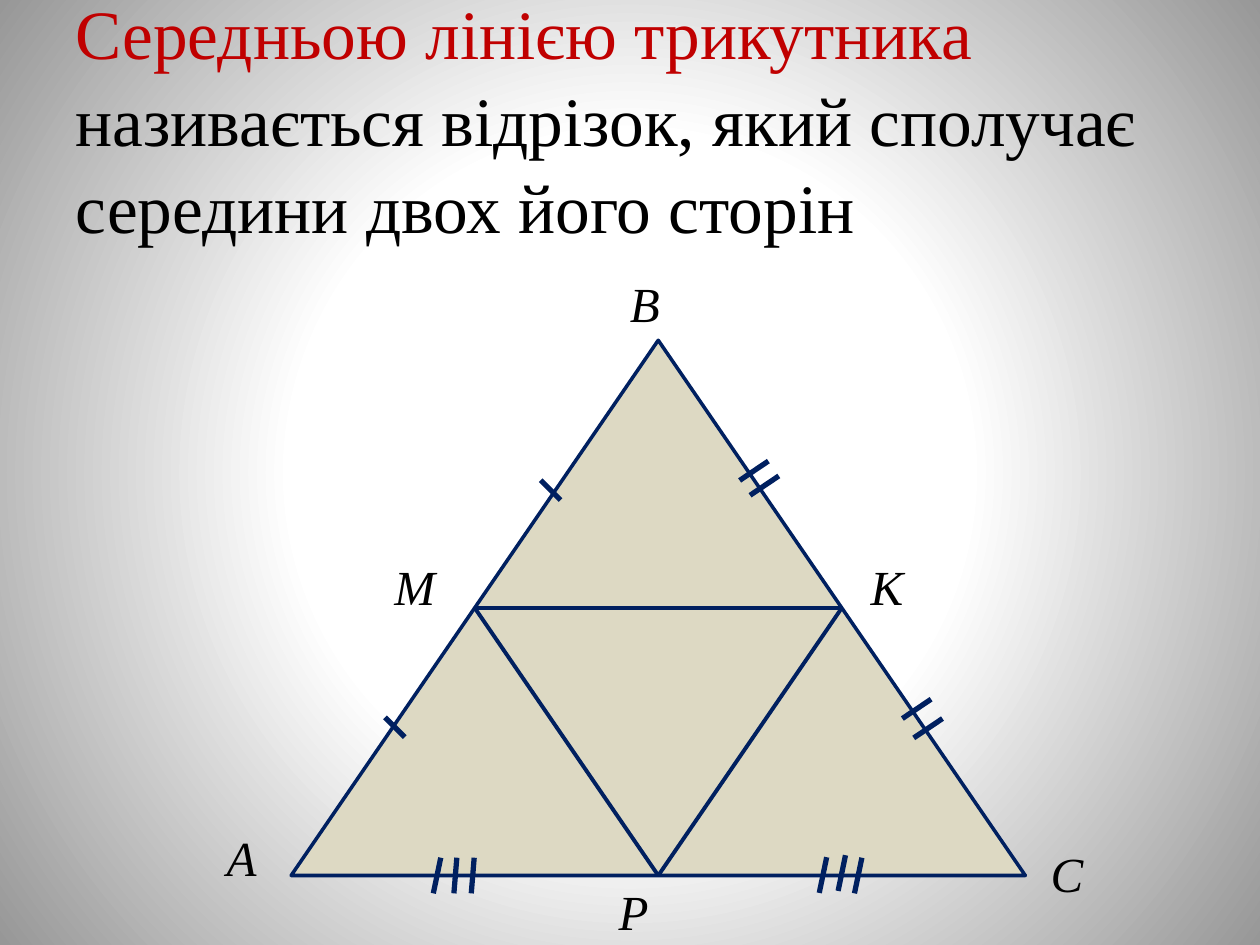
import dataclasses
import lxml.etree
import pptx
import pptx.dml.color
import pptx.enum.shapes
import pptx.enum.text
import pptx.oxml.ns
import pptx.util

Cm = pptx.util.Cm
Pt = pptx.util.Pt
RGBColor = pptx.dml.color.RGBColor
qn = pptx.oxml.ns.qn

NAVY = RGBColor(0x00, 0x20, 0x60)
SAND = RGBColor(0xDD, 0xD9, 0xC3)
RED = RGBColor(0xC0, 0x00, 0x00)
BLACK = RGBColor(0x00, 0x00, 0x00)
WHITE = RGBColor(0xFF, 0xFF, 0xFF)
GREY = RGBColor(0x97, 0x97, 0x97)
FONT = "Times New Roman"


@dataclasses.dataclass
class Point:
    x: float
    y: float


@dataclasses.dataclass
class Label:
    text: str
    x: float
    y: float
    width: float


@dataclasses.dataclass
class Ticks:
    """Parallel strokes: half of one stroke, and the stroke centres."""
    dx: float
    dy: float
    spots: list[Point]


def middle(a: Point, b: Point) -> Point:
    return Point((a.x + b.x) / 2, (a.y + b.y) / 2)


def style(run, size: float, color: RGBColor, slant: bool = False) -> None:
    run.font.name = FONT
    run.font.size = Pt(size)
    run.font.color.rgb = color
    run.font.italic = slant


def draw_line(slide, a: Point, b: Point, width: float) -> None:
    line = slide.shapes.add_connector(
        pptx.enum.shapes.MSO_CONNECTOR.STRAIGHT,
        Cm(a.x), Cm(a.y), Cm(b.x), Cm(b.y))
    line.line.color.rgb = NAVY
    line.line.width = Pt(width)
    lxml.etree.SubElement(line.element.spPr, qn("a:effectLst"))


def draw_ticks(slide, ticks: Ticks) -> None:
    for spot in ticks.spots:
        draw_line(slide, Point(spot.x - ticks.dx / 2, spot.y - ticks.dy / 2),
                  Point(spot.x + ticks.dx / 2, spot.y + ticks.dy / 2), 3)


def draw_label(slide, label: Label) -> None:
    box = slide.shapes.add_textbox(
        Cm(label.x), Cm(label.y), Cm(label.width), Cm(1.45))
    box.text_frame.word_wrap = False
    box.text_frame.text = label.text
    style(box.text_frame.paragraphs[0].runs[0], 28, BLACK, True)


def paint_back(slide) -> None:
    fill = slide.background.fill
    fill.gradient()
    for stop, color, place in zip(fill.gradient_stops, (WHITE, GREY), (0.43, 1)):
        stop.color.rgb = color
        stop.position = place
    # Turn the linear gradient into a round one
    grad = slide.element.find(".//" + qn("a:gradFill"))
    grad.remove(grad.find(qn("a:lin")))
    round_ = lxml.etree.SubElement(grad, qn("a:path"), path="circle")
    lxml.etree.SubElement(round_, qn("a:fillToRect"),
                          l="50000", t="50000", r="50000", b="50000")


def write_title(slide) -> None:
    title = slide.shapes.title
    title.left, title.top = Cm(1.27), Cm(0.76)
    title.width, title.height = Cm(22.86), Cm(3.18)
    frame = title.text_frame
    frame.word_wrap = True
    frame.auto_size = pptx.enum.text.MSO_AUTO_SIZE.NONE
    frame.vertical_anchor = pptx.enum.text.MSO_ANCHOR.MIDDLE
    para = frame.paragraphs[0]
    para.alignment = pptx.enum.text.PP_ALIGN.LEFT
    para.line_spacing = 1.05
    for text, color in (
            ("Середньою лінією трикутника ", RED),
            ("називається відрізок, який сполучає середини двох його сторін",
             BLACK)):
        run = para.add_run()
        run.text = text
        style(run, 39.6, color)


# Corners of the triangle and midpoints of its sides, in centimetres
A, B, C = Point(5.87, 17.65), Point(13.27, 6.86), Point(20.67, 17.65)
M, K, P = middle(A, B), middle(B, C), middle(A, C)

LABELS = [
    Label("A", 4.32, 16.56, 1.19),
    Label("B", 12.45, 5.38, 1.12),
    Label("C", 20.93, 16.87, 1.17),
    Label("M", 7.7, 11.1, 1.35),
    Label("K", 17.3, 11.1, 1.17),
    Label("Р", 12.22, 17.65, 1.12),
]

TICKS = [
    Ticks(0.4, 0.4, [Point(7.96, 14.66), Point(11.1, 9.88)]),
    Ticks(0.58, -0.39, [Point(15.2, 9.49), Point(15.41, 9.79),
                        Point(18.48, 14.29), Point(18.71, 14.68)]),
    Ticks(0.15, -0.72, [Point(8.81, 17.65), Point(16.59, 17.64),
                        Point(16.97, 17.6), Point(17.3, 17.65)]),
    Ticks(0.06, -0.72, [Point(9.18, 17.65), Point(9.53, 17.65)]),
]


def main() -> None:
    deck = pptx.Presentation()
    deck.slide_width, deck.slide_height = Cm(25.4), Cm(19.05)
    slide = deck.slides.add_slide(deck.slide_layouts[5])
    paint_back(slide)
    write_title(slide)

    # Triangle
    shape = slide.shapes.add_shape(
        pptx.enum.shapes.MSO_SHAPE.ISOSCELES_TRIANGLE,
        Cm(A.x), Cm(B.y), Cm(C.x - A.x), Cm(A.y - B.y))
    shape.shadow.inherit = False
    shape.fill.solid()
    shape.fill.fore_color.rgb = SAND
    shape.line.color.rgb = NAVY
    shape.line.width = Pt(2)

    # Midlines, tick marks and letters
    for start, end in ((M, K), (M, P), (K, P)):
        draw_line(slide, start, end, 2.25)
    for ticks in TICKS:
        draw_ticks(slide, ticks)
    for label in LABELS:
        draw_label(slide, label)

    deck.save("out.pptx")


if __name__ == "__main__":
    main()
